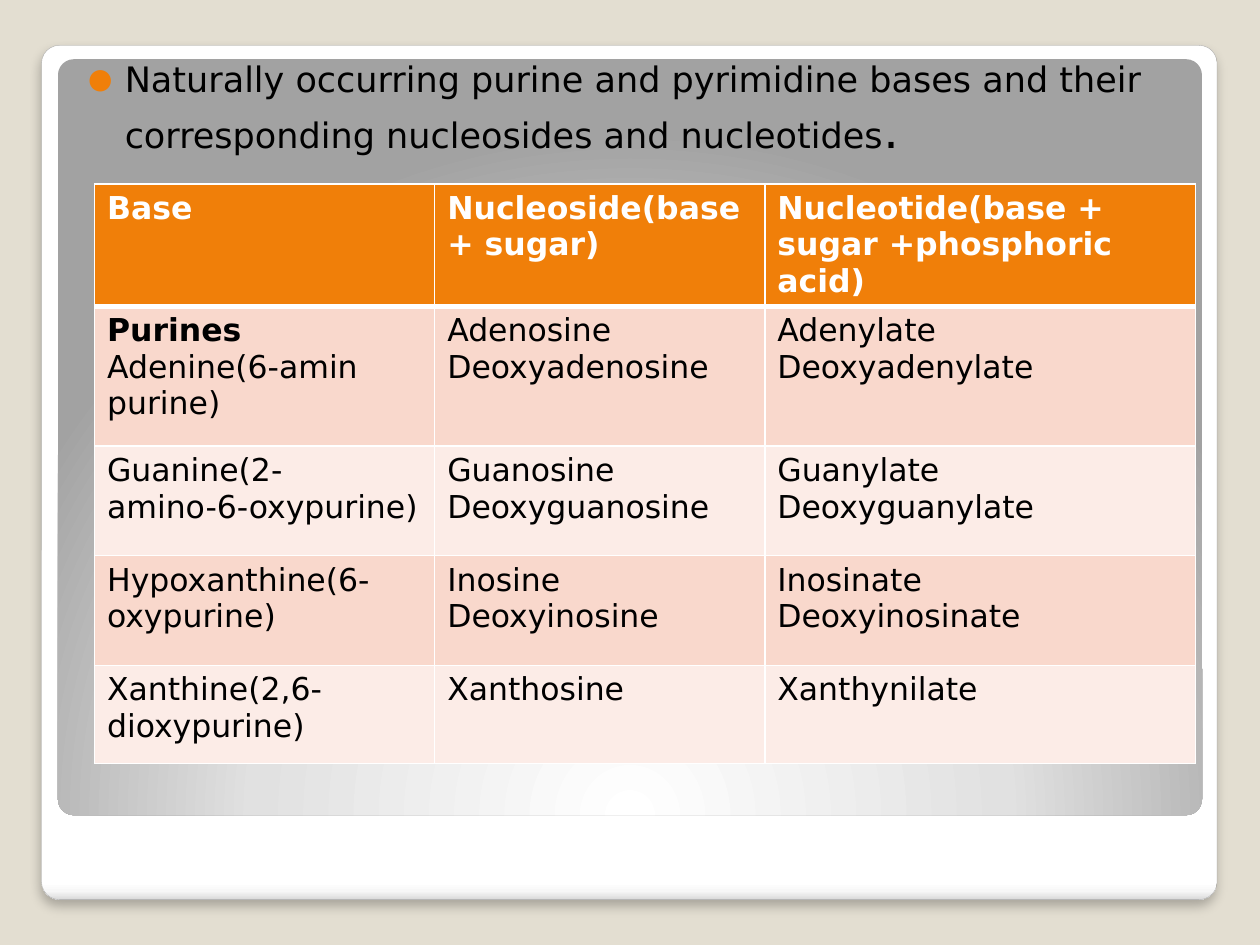
from lxml.etree import SubElement
from pptx import Presentation
from pptx.dml.color import RGBColor
from pptx.enum.shapes import MSO_SHAPE
from pptx.enum.text import MSO_ANCHOR, MSO_AUTO_SIZE
from pptx.oxml import parse_xml
from pptx.oxml.ns import nsdecls, qn
from pptx.util import Inches, Pt

FONT = "DejaVu Sans"
COLORS = {
    "background": "E3DED1", "accent": "F07F09", "text": "000000", "white": "FFFFFF",
    "odd_row": "F9D8CC", "even_row": "FCECE7", "frame_line": "A4A4A4",
}
INTRO = [
    ("Naturally occurring purine and pyrimidine bases and their "
     "corresponding nucleosides and nucleotides", 20),
    (".", 28),
]
# Each cell is a list of paragraphs
ROWS = [
    [["Base"], ["Nucleoside(base + sugar)"], ["Nucleotide(base + sugar +phosphoric acid)"]],
    [["Purines", "Adenine(6-amin purine)"], ["Adenosine", "Deoxyadenosine"],
     ["Adenylate", "Deoxyadenylate"]],
    [["Guanine(2-amino-6-oxypurine)"], ["Guanosine", "Deoxyguanosine"],
     ["Guanylate", "Deoxyguanylate"]],
    [["Hypoxanthine(6-oxypurine)"], ["Inosine", "Deoxyinosine"],
     ["Inosinate", "Deoxyinosinate"]],
    [["Xanthine(2,6-dioxypurine)"], ["Xanthosine"], ["Xanthynilate"]],
]
BOLD_TEXTS = {"Purines"}
COLUMN_WIDTHS = [2.7, 2.62, 3.42]
ROW_HEIGHTS = [0.79, 1.11, 0.87, 0.87, 0.78]
FRAME_STOPS = [(0, "FFFFFF"), (98, "FFFFFF"), (99, "F7F7F7"), (100, "DADADA")]
PANEL_STOPS = [(0, "FFFFFF"), (55, "E1E1E1"), (100, "A2A2A2")]
LINEAR_DOWN = '<a:lin ang="5400000" scaled="0"/>'
GLOW_FROM_BELOW = ('<a:path path="circle"><a:fillToRect l="50000" t="175000" '
                   'r="50000" b="-75000"/></a:path>')


def rgb(name):
    return RGBColor.from_string(COLORS[name])


def add_panel(slide, box, stops, direction):
    panel = slide.shapes.add_shape(MSO_SHAPE.ROUNDED_RECTANGLE, *map(Inches, box))
    panel.adjustments[0] = 0.021
    panel.shadow.inherit = False
    panel.line.fill.background()
    stop_xml = "".join(
        f'<a:gs pos="{position * 1000}"><a:srgbClr val="{color}"/></a:gs>'
        for position, color in stops)
    gradient = parse_xml(f'<a:gradFill {nsdecls("a")} rotWithShape="1">'
                         f'<a:gsLst>{stop_xml}</a:gsLst>{direction}</a:gradFill>')
    panel._element.spPr.find(qn("a:prstGeom")).addnext(gradient)
    return panel


def add_soft_shadow(shape):
    effects = shape._element.spPr.find(qn("a:effectLst"))
    effects.append(parse_xml(
        f'<a:outerShdw {nsdecls("a")} blurRad="{Pt(6)}" dist="{Pt(4)}" dir="5400000" '
        'algn="t" rotWithShape="0"><a:srgbClr val="000000"><a:alpha val="25000"/>'
        '</a:srgbClr></a:outerShdw>'))


def add_run(paragraph, text, size, color, bold=False):
    run = paragraph.add_run()
    run.text = text
    run.font.name = FONT
    run.font.size = Pt(size)
    run.font.bold = bold
    run.font.color.rgb = rgb(color)


def add_bullet(paragraph):
    properties = paragraph._p.get_or_add_pPr()
    properties.set("marL", str(Inches(0.29)))
    properties.set("indent", str(Inches(-0.29)))
    bullet_color = SubElement(properties, qn("a:buClr"))
    SubElement(bullet_color, qn("a:srgbClr"), val=COLORS["accent"])
    SubElement(properties, qn("a:buSzPct"), val="80000")
    SubElement(properties, qn("a:buFont"), typeface=FONT)
    SubElement(properties, qn("a:buChar"), char="●")


def set_borders(cell, widths):
    properties = cell._tc.get_or_add_tcPr()
    for side, width in widths.items():
        line = SubElement(properties, qn(f"a:ln{side}"), w=str(Pt(width)))
        fill = SubElement(line, qn("a:solidFill"))
        SubElement(fill, qn("a:srgbClr"), val=COLORS["white"])


def fill_cell(cell, texts, row_index):
    header = row_index == 0
    top = 3 if row_index == 1 else 1
    set_borders(cell, {"L": 1, "R": 1, "T": top, "B": 3 if header else 1})
    cell.fill.solid()
    cell.fill.fore_color.rgb = rgb(
        "accent" if header else "odd_row" if row_index % 2 else "even_row")
    frame = cell.text_frame
    for index, text in enumerate(texts):
        paragraph = frame.add_paragraph() if index else frame.paragraphs[0]
        add_run(paragraph, text, 18, "white" if header else "text",
                header or text in BOLD_TEXTS)


def main():
    presentation = Presentation()
    presentation.slide_width, presentation.slide_height = Inches(10), Inches(7.5)
    slide = presentation.slides.add_slide(presentation.slide_layouts[1])
    slide.background.fill.solid()
    slide.background.fill.fore_color.rgb = rgb("background")
    title = slide.shapes.title
    title._element.getparent().remove(title._element)

    # Backdrop
    frame = add_panel(slide, (0.33, 0.36, 9.33, 6.78), FRAME_STOPS, LINEAR_DOWN)
    frame.line.color.rgb = rgb("frame_line")
    frame.line.width = Pt(0.16)
    add_soft_shadow(frame)
    panel = add_panel(slide, (0.46, 0.47, 9.08, 6), PANEL_STOPS, GLOW_FROM_BELOW)

    # Introductory bullet, in front of the backdrop
    body = slide.placeholders[1]
    panel._element.addnext(body._element)
    body.left, body.top, body.width, body.height = map(Inches, (0.5, 0.36, 9, 6.34))
    text_frame = body.text_frame
    text_frame.word_wrap = True
    text_frame.auto_size = MSO_AUTO_SIZE.NONE
    text_frame.vertical_anchor = MSO_ANCHOR.TOP
    text_frame.margin_left, text_frame.margin_top = Inches(0.2), Inches(0.1)
    text_frame.margin_right, text_frame.margin_bottom = Inches(0.1), Inches(0.05)
    paragraph = text_frame.paragraphs[0]
    paragraph.space_before = Pt(2.5)
    add_bullet(paragraph)
    for text, size in INTRO:
        add_run(paragraph, text, size, "text")

    # Table of bases
    table = slide.shapes.add_table(
        len(ROWS), len(COLUMN_WIDTHS), Inches(0.75), Inches(1.46),
        Inches(sum(COLUMN_WIDTHS)), Inches(sum(ROW_HEIGHTS))).table
    for column, width in zip(table.columns, COLUMN_WIDTHS):
        column.width = Inches(width)
    for row_index, (row, height) in enumerate(zip(table.rows, ROW_HEIGHTS)):
        row.height = Inches(height)
        for cell, texts in zip(row.cells, ROWS[row_index]):
            fill_cell(cell, texts, row_index)

    presentation.save("out.pptx")


if __name__ == "__main__":
    main()
